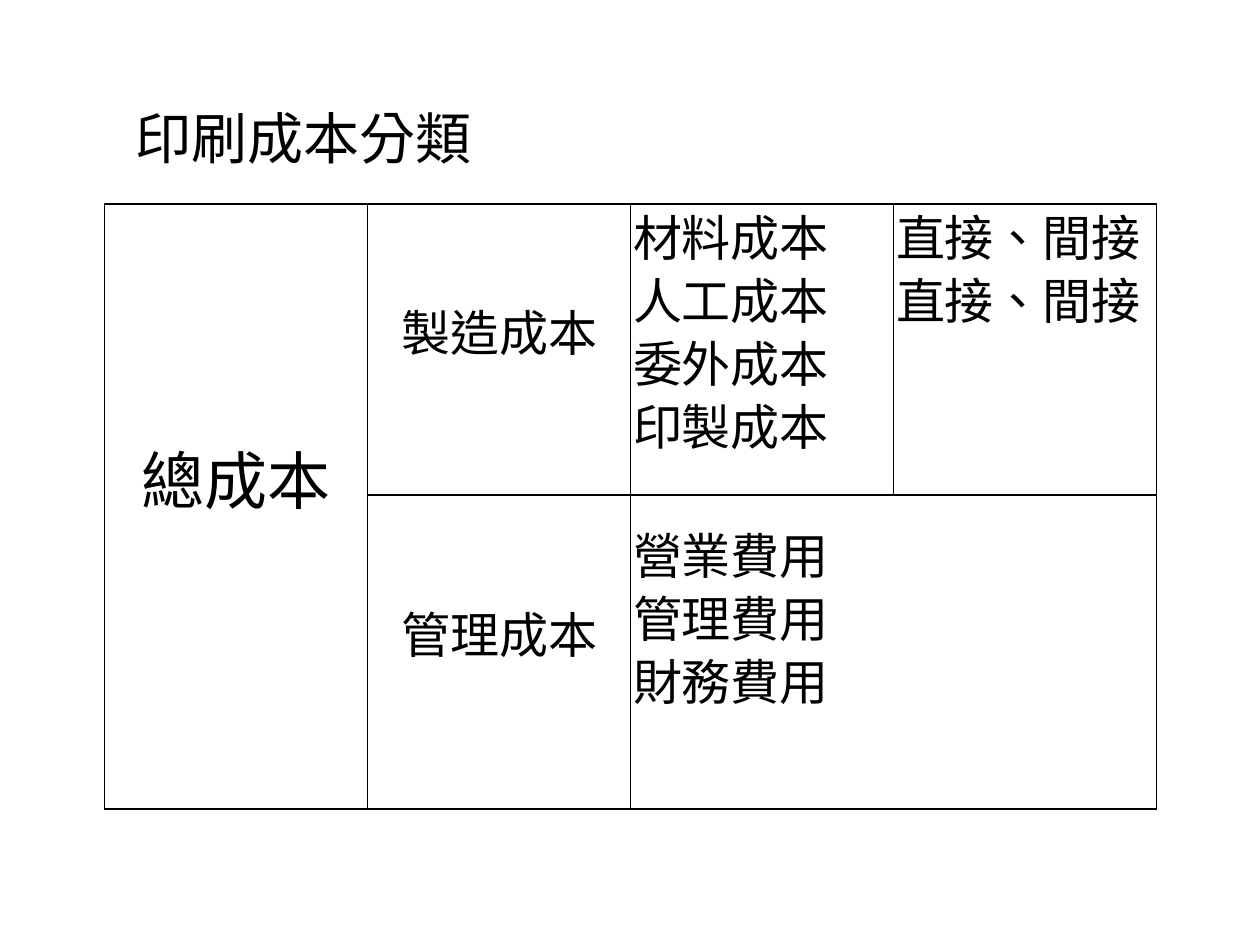
import dataclasses

import pptx
import pptx.dml.color
import pptx.enum.lang
import pptx.enum.text
import pptx.oxml
import pptx.oxml.ns
import pptx.util

Inches, Pt = pptx.util.Inches, pptx.util.Pt
ALIGN = pptx.enum.text.PP_ALIGN
MIDDLE = pptx.enum.text.MSO_ANCHOR.MIDDLE


@dataclasses.dataclass(frozen=True)
class Theme:
    """Hold the colours, fonts and sizes of the deck."""
    ink: str = "000000"
    latin: str = "Times New Roman"
    asian: str = "Noto Sans CJK SC"
    title: int = 32
    total: int = 36
    body: int = 28
    line: int = 18
    border: int = 1


THEME = Theme()


def write_text(frame, text, size=THEME.body, font=THEME.latin,
               align=ALIGN.LEFT, line=None, gap=0):
    """Write each line of text as one paragraph, with a gap between them."""
    for index, words in enumerate(text.split("\n")):
        para = frame.add_paragraph() if index else frame.paragraphs[0]
        para.alignment = align
        para.space_before = Pt(gap if index else 0)
        if line:
            para.line_spacing = Pt(line)
        span = para.add_run()
        span.text = words
        span.font.size = Pt(size)
        span.font.name = font
        span.font.language_id = pptx.enum.lang.MSO_LANGUAGE_ID.TRADITIONAL_CHINESE
        span.font.color.rgb = pptx.dml.color.RGBColor.from_string(THEME.ink)
        asian = pptx.oxml.parse_xml(
            f'<a:ea {pptx.oxml.ns.nsdecls("a")} typeface="{THEME.asian}"/>')
        span.font._element.find(pptx.oxml.ns.qn("a:latin")).addnext(asian)


def draw_borders(cell):
    """Rule all four sides of a cell and leave it unfilled."""
    properties = cell._tc.get_or_add_tcPr()
    for side in ("lnL", "lnR", "lnT", "lnB"):
        properties.append(pptx.oxml.parse_xml(
            f'<a:{side} {pptx.oxml.ns.nsdecls("a")} w="{Pt(THEME.border)}">'
            f'<a:solidFill><a:srgbClr val="{THEME.ink}"/></a:solidFill></a:{side}>'))
    cell.fill.background()


def fill_cell(cell, text, empty_lines=0, **text_format):
    """Write a cell, keeping some empty lines free below its text."""
    cell.vertical_anchor = MIDDLE
    cell.margin_left = cell.margin_right = Inches(0.02)
    cell.margin_top = 0
    cell.margin_bottom = Pt(empty_lines * THEME.line)
    write_text(cell.text_frame, text, line=THEME.line, gap=THEME.line, **text_format)


def add_title(page, left, top, width, height):
    """Place the slide title in its box."""
    box = page.shapes.add_textbox(left, top, width, height)
    box.text_frame.word_wrap = True
    box.text_frame.vertical_anchor = MIDDLE
    write_text(box.text_frame, "印刷成本分類", size=THEME.title, font=THEME.asian)


def add_cost_table(page, left, top, width, row_heights):
    """Place the table that splits total cost into its classes."""
    table = page.shapes.add_table(
        len(row_heights), 4, left, top, width, sum(row_heights)).table
    table.first_row = table.horz_banding = False
    for row, height in zip(table.rows, row_heights):
        row.height = height
    for column in table.columns:
        column.width = width // 4
    for cell in table.iter_cells():
        draw_borders(cell)
    table.cell(0, 0).merge(table.cell(1, 0))
    table.cell(1, 2).merge(table.cell(1, 3))

    fill_cell(table.cell(0, 0), "總成本", size=THEME.total, align=ALIGN.CENTER)
    fill_cell(table.cell(0, 1), "製造成本", align=ALIGN.CENTER)
    fill_cell(table.cell(1, 1), "管理成本", align=ALIGN.CENTER)
    fill_cell(table.cell(0, 2), "材料成本\n人工成本\n委外成本\n印製成本")
    fill_cell(table.cell(0, 3), "直接、間接\n直接、間接", empty_lines=4)
    fill_cell(table.cell(1, 2), "營業費用\n管理費用\n財務費用", empty_lines=1)


def main():
    """Build the slide and save it."""
    deck = pptx.Presentation()
    deck.slide_width, deck.slide_height = Inches(10), Inches(7.5)
    page = deck.slides.add_slide(deck.slide_layouts[6])
    add_cost_table(page, Inches(0.83), Inches(1.62), Inches(8.35),
                   [Inches(2.31), Inches(2.49)])
    add_title(page, Inches(0.98), Inches(0.77), Inches(5.28), Inches(0.64))
    deck.save("out.pptx")


if __name__ == "__main__":
    main()
